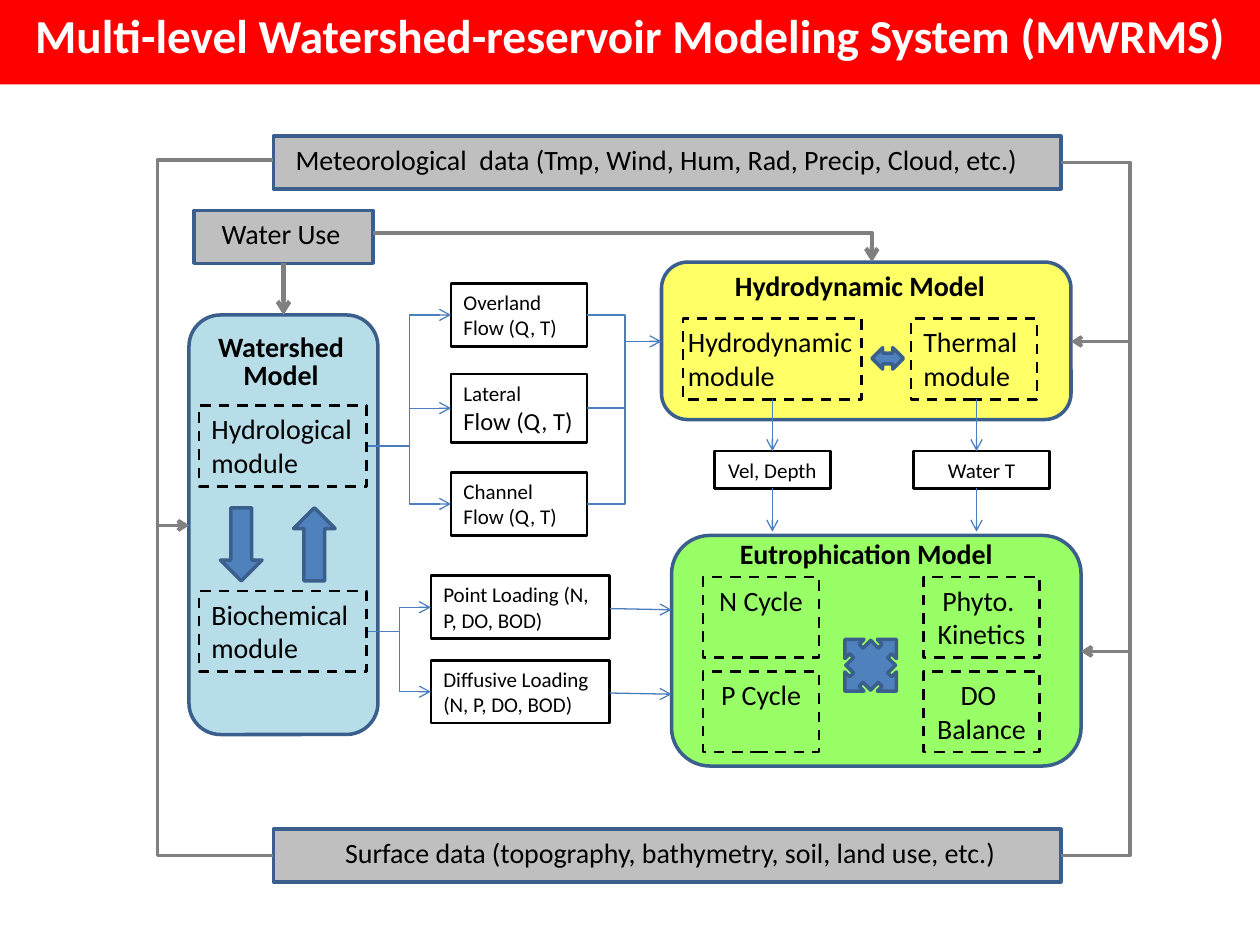
from dataclasses import dataclass

from lxml import etree
from pptx import Presentation
from pptx.dml.color import RGBColor
from pptx.enum.dml import MSO_LINE
from pptx.enum.shapes import MSO_CONNECTOR as Conn, MSO_SHAPE as Shape
from pptx.enum.text import MSO_ANCHOR, PP_ALIGN
from pptx.oxml.ns import qn
from pptx.util import Inches, Pt


@dataclass(frozen=True)
class Theme:
    font: str = "Calibri"
    title: int = 27
    body: int = 16
    medium: int = 14
    small: int = 12
    black: str = "000000"
    white: str = "FFFFFF"
    red: str = "FF0000"
    gray: str = "BFBFBF"
    dark_gray: str = "808080"
    border: str = "3A5F8C"
    blue: str = "4F81BD"
    flow: str = "4B7EBC"
    pale_blue: str = "B7DEE8"
    yellow: str = "FFFF66"
    green: str = "99FF66"


T = Theme()


def add_text(sp, lines, size=T.body, color=T.black, bold=False, center=False,
             spacing=None, inset=0.1, last_size=None):
    tf = sp.text_frame
    tf.word_wrap = True
    tf.vertical_anchor = MSO_ANCHOR.TOP
    tf.margin_left = tf.margin_right = Inches(inset)
    lines = lines.split("\n")
    for i, line in enumerate(lines):
        p = tf.paragraphs[0] if i == 0 else tf.add_paragraph()
        p.alignment = PP_ALIGN.CENTER if center else PP_ALIGN.LEFT
        if spacing:
            p.line_spacing = Pt(spacing)
        r = p.add_run()
        r.text = line
        r.font.name = T.font
        r.font.size = Pt(last_size if last_size and i == len(lines) - 1 else size)
        r.font.bold = bold
        r.font.color.rgb = RGBColor.from_string(color)


def add_box(s, x, y, w, h, kind=Shape.RECTANGLE, fill=None, line=T.border,
            weight=2, dash=False, rotation=0):
    sp = s.shapes.add_shape(kind, Inches(x), Inches(y), Inches(w), Inches(h))
    sp.shadow.inherit = False
    sp.rotation = rotation
    if fill:
        sp.fill.solid()
        sp.fill.fore_color.rgb = RGBColor.from_string(fill)
    else:
        sp.fill.background()
    if line:
        sp.line.color.rgb = RGBColor.from_string(line)
        sp.line.width = Pt(weight)
        if dash:
            sp.line.dash_style = MSO_LINE.DASH
    else:
        sp.line.fill.background()
    return sp


def add_label(s, x, y, w, h, text, **fmt):
    add_text(s.shapes.add_textbox(Inches(x), Inches(y), Inches(w), Inches(h)), text, **fmt)


def add_module(s, x, y, w, text, **fmt):
    add_text(add_box(s, x, y, w, 0.64, line=T.black, weight=1.5, dash=True), text, **fmt)


def add_variable(s, x, y, w, h, text, **fmt):
    add_text(add_box(s, x, y, w, h, line=T.black, weight=1.5), text, size=T.small, **fmt)


def link(s, start, end, via=None, corner=False, color=T.flow, weight=0.75, arrow=True):
    """Connect two points; via is the x of the vertical run, corner makes a single bend."""
    kind = Conn.ELBOW if via or corner else Conn.STRAIGHT
    c = s.shapes.add_connector(kind, *(Inches(v) for v in (*start, *end)))
    c.line.color.rgb = RGBColor.from_string(color)
    c.line.width = Pt(weight)
    spPr = c._element.spPr
    geom = spPr.find(qn("a:prstGeom"))
    if corner:
        geom.set("prst", "bentConnector2")
    if via:
        ratio = (via - start[0]) / (end[0] - start[0])
        etree.SubElement(geom.find(qn("a:avLst")), qn("a:gd"),
                         name="adj1", fmla=f"val {round(ratio * 100000)}")
    if arrow:
        etree.SubElement(spPr.find(qn("a:ln")), qn("a:tailEnd"), type="arrow")
    etree.SubElement(spPr, qn("a:effectLst"))


def title_bar(s, x, y, w, h):
    add_text(add_box(s, x, y, w, h, fill=T.red, line=None),
             "Multi-level Watershed-reservoir Modeling System (MWRMS)",
             size=T.title, color=T.white, bold=True, center=True)


def input_bar(s, x, y, w, h, text, text_x, text_w):
    add_box(s, x, y, w, h, fill=T.gray)
    add_label(s, x + text_x, y, text_w, 0.37, text, center=True)


def model_panel(s, x, y, w, h, fill, name, name_box):
    add_box(s, x, y, w, h, kind=Shape.ROUNDED_RECTANGLE, fill=fill)
    dx, dy, name_w, name_h = name_box
    add_label(s, x + dx, y + dy, name_w, name_h, name, bold=True, center=True, spacing=16)


def watershed_model(s, x, y, w, h):
    model_panel(s, x, y, w, h, T.pale_blue, "Watershed Model", (0.02, 0.11, 1.42, 0.55))
    for dy, text in ((0.72, "Hydrological module"), (2.19, "Biochemical module")):
        add_module(s, x + 0.08, y + dy, 1.33, text)
    for dx, rotation in ((0.25, 180), (0.83, 0)):
        add_box(s, x + dx, y + 1.53, 0.33, 0.58, kind=Shape.UP_ARROW, fill=T.blue,
                rotation=rotation)


def hydrodynamic_model(s, x, y, w, h):
    model_panel(s, x, y, w, h, T.yellow, "Hydrodynamic Model", (0.2, 0.05, 2.75, 0.33))
    add_module(s, x + 0.17, y + 0.45, 1.42, "Hydrodynamic module", inset=0.04)
    add_module(s, x + 1.98, y + 0.45, 1, "Thermal module")
    add_box(s, x + 1.67, y + 0.68, 0.25, 0.17, kind=Shape.LEFT_RIGHT_ARROW, fill=T.blue)


def eutrophication_model(s, x, y, w, h):
    model_panel(s, x, y, w, h, T.green, "Eutrophication Model", (0.17, 0, 2.75, 0.33))
    rows = (("N Cycle", "Phyto. \nKinetics"), ("P Cycle", "DO \nBalance"))
    for i, row in enumerate(rows):
        for j, text in enumerate(row):
            add_module(s, x + 0.25 + 1.75 * j, y + 0.33 + 0.75 * i, 0.92, text, center=True)
    add_box(s, x + 1.29, y + 0.74, 0.58, 0.58, kind=Shape.QUAD_ARROW_CALLOUT,
            fill=T.blue, rotation=45)


def flow_variables(s, x, w, source, target):
    """Stack the three flows, fanned out from source and gathered into target."""
    flows = (("Overland", 2.25, 0.5, None), ("Lateral", 2.97, 0.54, T.medium),
             ("Channel", 3.75, 0.5, None))
    for name, y, h, last_size in flows:
        add_variable(s, x, y, w, h, f"{name}\nFlow (Q, T)", last_size=last_size)
        mid = y + h / 2
        link(s, source, (x, mid), via=3.25)
        link(s, (x + w, mid), target, via=4.96, arrow=name == "Channel")


def load_variables(s, x, w, source, target_x):
    for y, name in ((4.57, "Point Loading"), (5.24, "Diffusive Loading")):
        add_variable(s, x, y, w, 0.5, f"{name} (N, P, DO, BOD)")
        link(s, source, (x, y + 0.25), via=3.17)
        link(s, (x + w, y + 0.26), (target_x, y + 0.27))


def exchange_variables(s, y, h):
    for x, w, text, mid in ((5.67, 0.92, "Vel, Depth", 6.13), (7.25, 1.08, "Water T", 7.75)):
        add_variable(s, x, y, w, h, text, center=True)
        link(s, (mid, 3.17), (mid, y))
        link(s, (mid, y + h - 0.01), (mid, 4.22))


def input_links(s):
    gray = dict(color=T.dark_gray, weight=2)
    for y in (1.27, 6.79):
        link(s, (2.17, y), (1.5, 4.17), via=1.25, **gray)
    link(s, (8.42, 1.29), (8.5, 2.71), via=8.97, **gray)
    for y in (1.29, 6.79):
        link(s, (8.42, y), (8.58, 5.17), via=8.97, **gray)
    gray["weight"] = 2.5
    link(s, (2.96, 1.85), (6.92, 2.08), corner=True, **gray)
    link(s, (2.25, 2.09), (2.25, 2.5), **gray)


def main():
    prs = Presentation()
    prs.slide_width, prs.slide_height = Inches(10), Inches(7.5)
    s = prs.slides.add_slide(prs.slide_layouts[6])
    input_bar(s, 2.17, 6.58, 6.25, 0.42,
              "Surface data (topography, bathymetry, soil, land use, etc.)", 0.4, 5.5)
    input_bar(s, 2.17, 1.08, 6.25, 0.42,
              "Meteorological  data (Tmp, Wind, Hum, Rad, Precip, Cloud, etc.)", 0, 6.08)
    input_bar(s, 1.54, 1.67, 1.42, 0.42, "Water Use", 0, 1.38)
    eutrophication_model(s, 5.33, 4.25, 3.25, 1.83)
    hydrodynamic_model(s, 5.25, 2.08, 3.25, 1.25)
    watershed_model(s, 1.5, 2.5, 1.5, 3.33)
    flow_variables(s, 3.58, 1.08, source=(2.92, 3.54), target=(5.25, 2.71))
    load_variables(s, 3.42, 1.42, source=(2.92, 5.01), target_x=5.33)
    exchange_variables(s, 3.58, 0.3)
    input_links(s)
    title_bar(s, 0, 0, 10, 0.67)
    prs.save("out.pptx")


if __name__ == "__main__":
    main()
